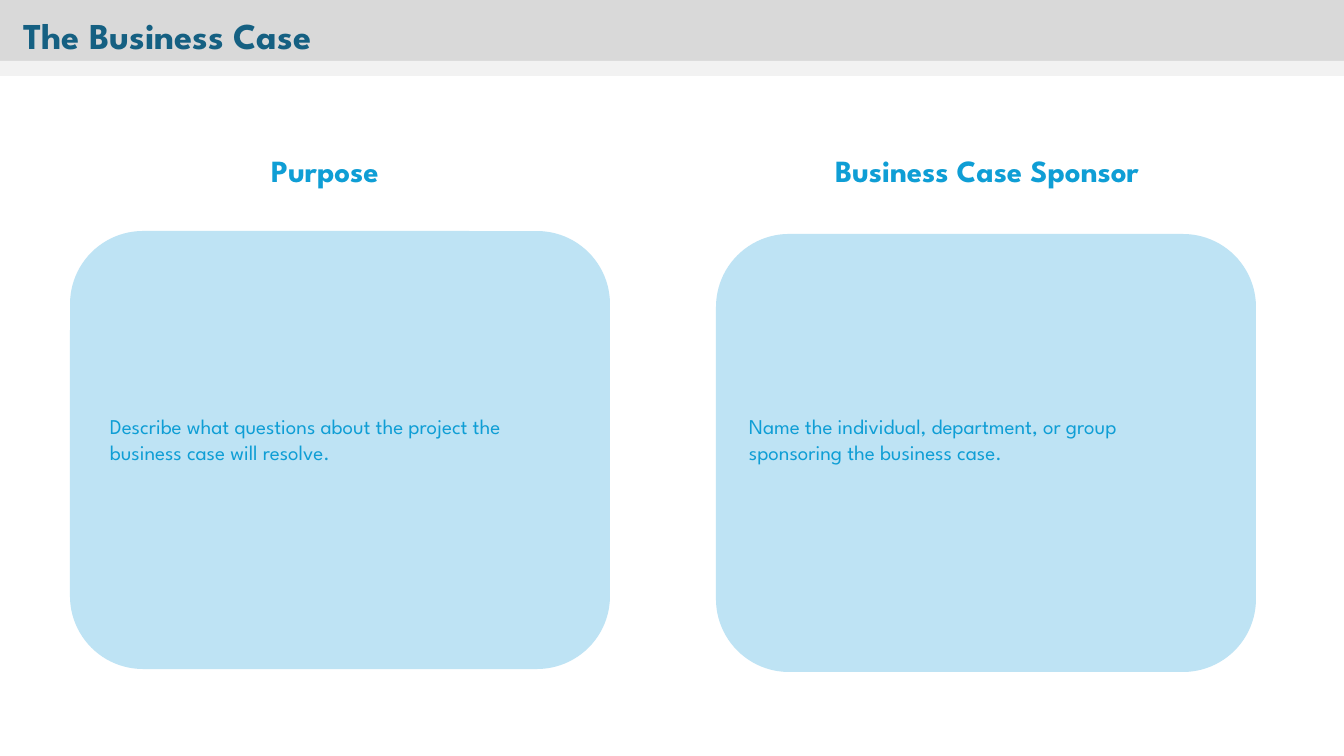
from pptx import Presentation
from pptx.dml.color import RGBColor
from pptx.enum.shapes import MSO_SHAPE
from pptx.enum.text import MSO_ANCHOR, MSO_AUTO_SIZE, PP_ALIGN
from pptx.util import Pt

RECTANGLE, ROUNDED = MSO_SHAPE.RECTANGLE, MSO_SHAPE.ROUNDED_RECTANGLE
LEFT, CENTER = PP_ALIGN.LEFT, PP_ALIGN.CENTER
TOP, NO_AUTOFIT = MSO_ANCHOR.TOP, MSO_AUTO_SIZE.NONE

FONT = "League Spartan"
NAVY = RGBColor(0x15, 0x60, 0x82)
BLUE = RGBColor(0x0F, 0x9E, 0xD5)
PALE_BLUE = RGBColor(0xBE, 0xE3, 0xF4)
GRAY = RGBColor(0xD9, 0xD9, 0xD9)
LIGHT_GRAY = RGBColor(0xF2, 0xF2, 0xF2)

# Content; boxes are (left, top, width, height) in px
SLIDE_WIDTH, SLIDE_HEIGHT = 1344, 756
EMU_PER_PX = 914400 / 100.8

TITLE = "The Business Case"
TITLE_BOX = (13, 8, 924, 54)
HEADER_BARS = [
    ((0, 0, SLIDE_WIDTH, 62), GRAY),
    ((0, 61, SLIDE_WIDTH, 15), LIGHT_GRAY),
]
COLUMNS = [
    {
        "heading": "Purpose",
        "heading_box": (164, 147, 322, 47),
        "card_box": (70, 231, 540, 438),
        "body": "Describe what questions about the project the business case will resolve.",
        "body_box": (100, 409, 468, 61),
    },
    {
        "heading": "Business Case Sponsor",
        "heading_box": (719, 147, 536, 47),
        "card_box": (716, 234, 540, 438),
        "body": "Name the individual, department, or group sponsoring the business case.",
        "body_box": (739, 409, 468, 61),
    },
]


def px(length):
    return round(length * EMU_PER_PX)


def add_block(slide, kind, box, color):
    shape = slide.shapes.add_shape(kind, *map(px, box))
    shape.shadow.inherit = False
    shape.fill.solid()
    shape.fill.fore_color.rgb = color
    shape.line.fill.background()
    return shape


def write(shape, text, size, color, bold=False, alignment=LEFT):
    frame = shape.text_frame
    frame.word_wrap = True
    frame.auto_size = NO_AUTOFIT
    frame.vertical_anchor = TOP
    paragraph = frame.paragraphs[0]
    paragraph.alignment = alignment
    run = paragraph.add_run()
    run.text = text
    run.font.name = FONT
    run.font.size = Pt(size)
    run.font.bold = bold
    run.font.color.rgb = color


def add_text(slide, box, *text_format):
    write(slide.shapes.add_textbox(*map(px, box)), *text_format)


def main():
    presentation = Presentation()
    presentation.slide_width = px(SLIDE_WIDTH)
    presentation.slide_height = px(SLIDE_HEIGHT)
    slide = presentation.slides.add_slide(presentation.slide_layouts[5])

    # Header bars, with the title raised in front of them
    for box, color in HEADER_BARS:
        bar = add_block(slide, RECTANGLE, box, color)
    title = slide.shapes.title
    title.left, title.top, title.width, title.height = map(px, TITLE_BOX)
    write(title, TITLE, 26, NAVY, True)
    bar.element.addnext(title.element)

    # Columns: heading, card and card text
    for column in COLUMNS:
        add_text(slide, column["heading_box"], column["heading"], 22, BLUE, True, CENTER)
        add_block(slide, ROUNDED, column["card_box"], PALE_BLUE)
        add_text(slide, column["body_box"], column["body"], 15, BLUE)

    presentation.save("out.pptx")


if __name__ == "__main__":
    main()
